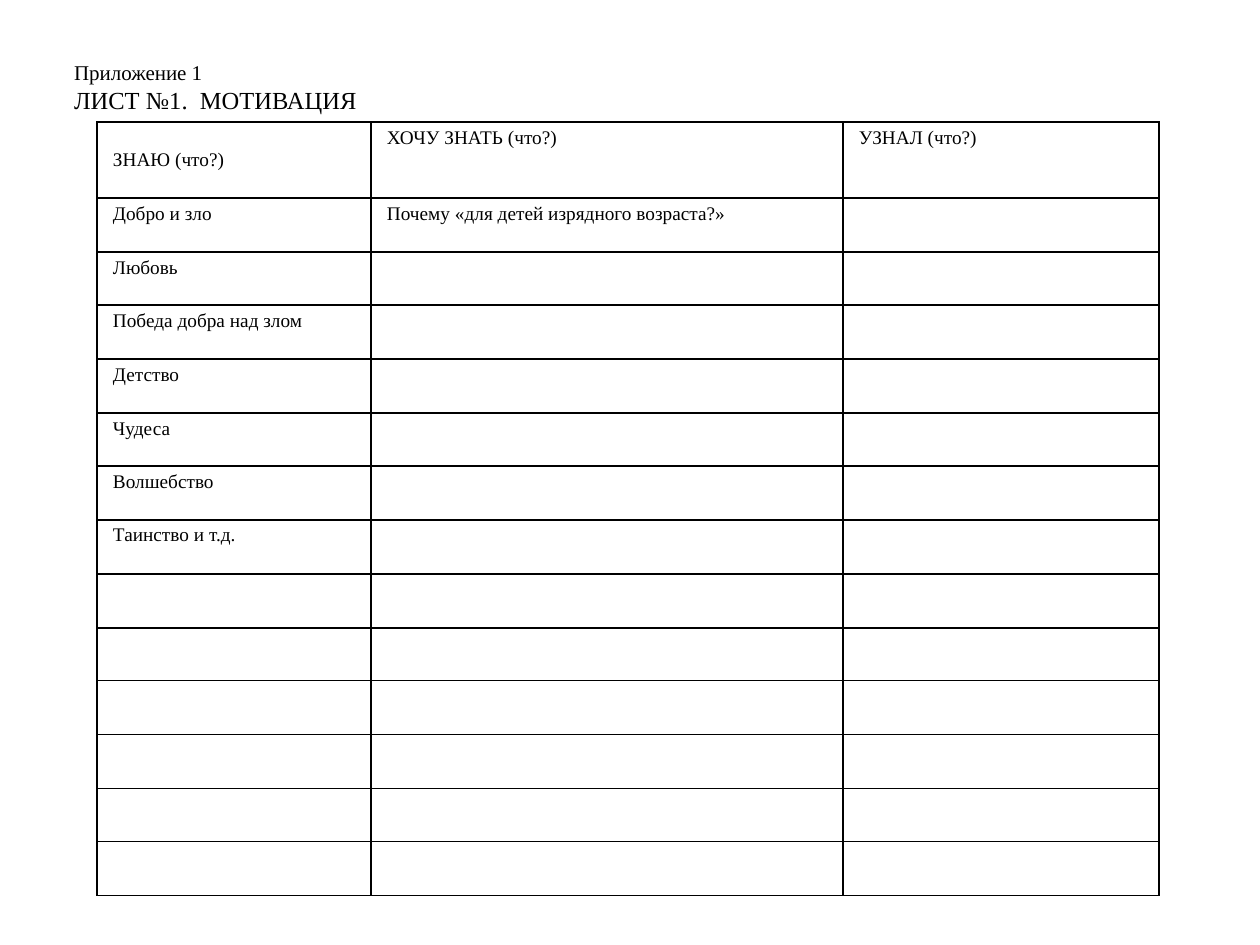
from lxml import etree
from pptx import Presentation
from pptx import util as u
from pptx.dml import color
from pptx.enum import text
from pptx.oxml import ns

SCALE = 914400 / 126
BLACK = "000000"


def px(length):
    return u.Emu(round(length * SCALE))


def write(paragraph, content, size=11, font="Times New Roman", colour=BLACK):
    run = paragraph.add_run()
    run.text = content
    run.font.size = u.Pt(size)
    run.font.name = font
    run.font.color.rgb = color.RGBColor.from_string(colour)


presentation = Presentation()
presentation.slide_width = px(1260)
presentation.slide_height = px(945)
slide = presentation.slides.add_slide(presentation.slide_layouts[6])

heading = slide.shapes.add_textbox(px(0), px(53), px(373), px(68)).text_frame
heading.word_wrap = False
heading.vertical_anchor = text.MSO_ANCHOR.MIDDLE
heading.margin_left = px(74)
write(heading.paragraphs[0], "Приложение 1", size=12)
write(heading.add_paragraph(), "ЛИСТ №1.  МОТИВАЦИЯ", size=14)

column_widths = [274, 472, 316]
header_height = 76
body_height = 698
body_count = 13
edges = [round(i * body_height / body_count) for i in range(body_count + 1)]
row_heights = [header_height] + [b - a for a, b in zip(edges, edges[1:])]

known = ["ЗНАЮ (что?)", "Добро и зло", "Любовь", "Победа добра над злом",
         "Детство", "Чудеса", "Волшебство", "Таинство и т.д."]
wanted = ["ХОЧУ ЗНАТЬ (что?)", "Почему «для детей изрядного возраста?»"]
learned = ["УЗНАЛ (что?)"]

table = slide.shapes.add_table(
    len(row_heights), len(column_widths), px(97), px(122),
    px(sum(column_widths)), px(sum(row_heights))).table
table.first_row = False
table.horz_banding = False
for column, width in zip(table.columns, column_widths):
    column.width = px(width)
for row, height in zip(table.rows, row_heights):
    row.height = px(height)

for cell in table.iter_cells():
    cell.margin_left = cell.margin_right = px(16)
    cell.margin_top = cell.margin_bottom = px(5)
    properties = cell._tc.get_or_add_tcPr()
    for side in ("a:lnL", "a:lnR", "a:lnT", "a:lnB"):
        border = etree.SubElement(properties, ns.qn(side), w=str(u.Pt(1)))
        fill = etree.SubElement(border, ns.qn("a:solidFill"))
        etree.SubElement(fill, ns.qn("a:srgbClr"), val=BLACK)
    cell.fill.background()

for column_index, entries in enumerate((known, wanted, learned)):
    for row_index, entry in enumerate(entries):
        write(table.cell(row_index, column_index).text_frame.paragraphs[0], entry)
table.cell(0, 0).margin_top = px(27)

presentation.save("out.pptx")
